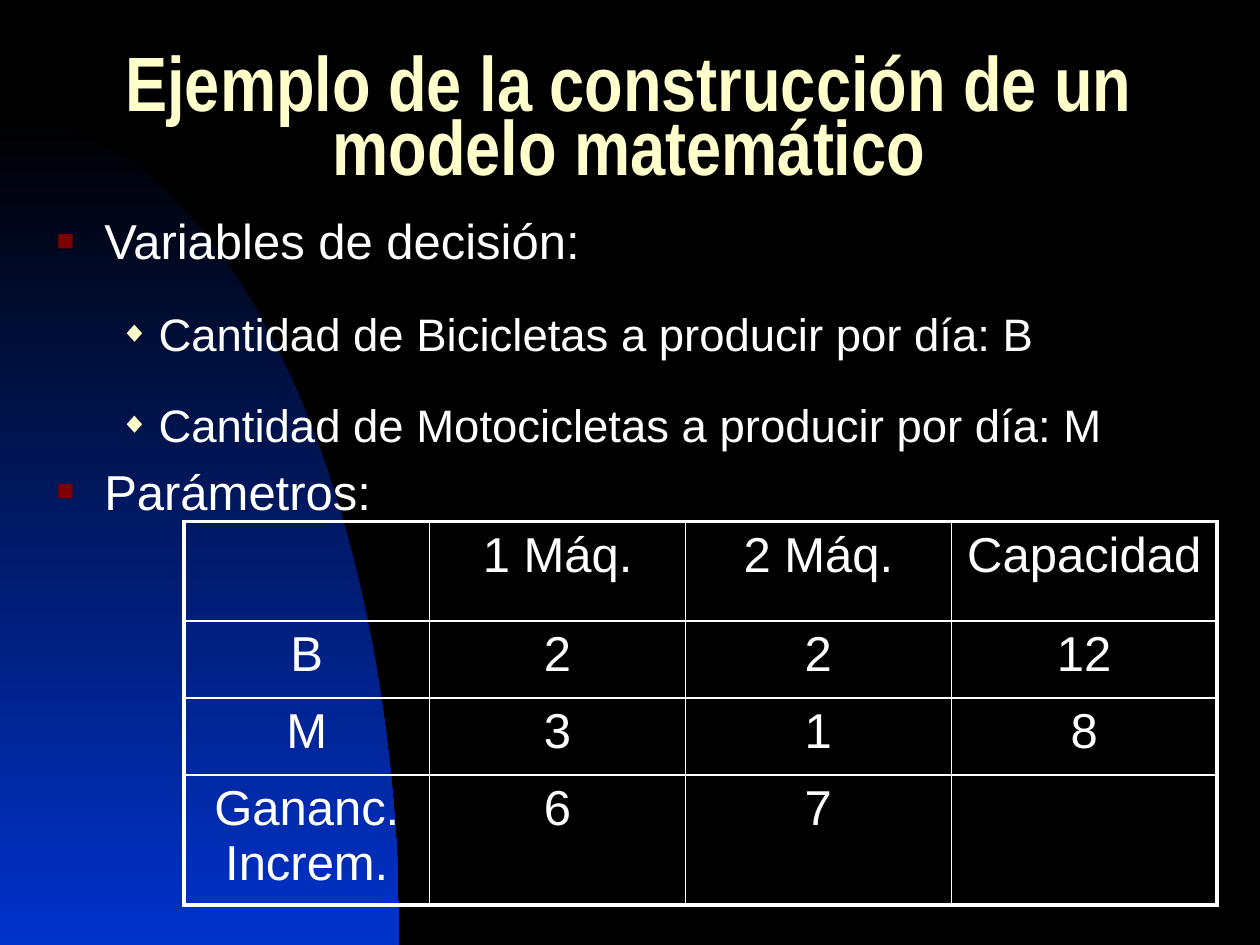
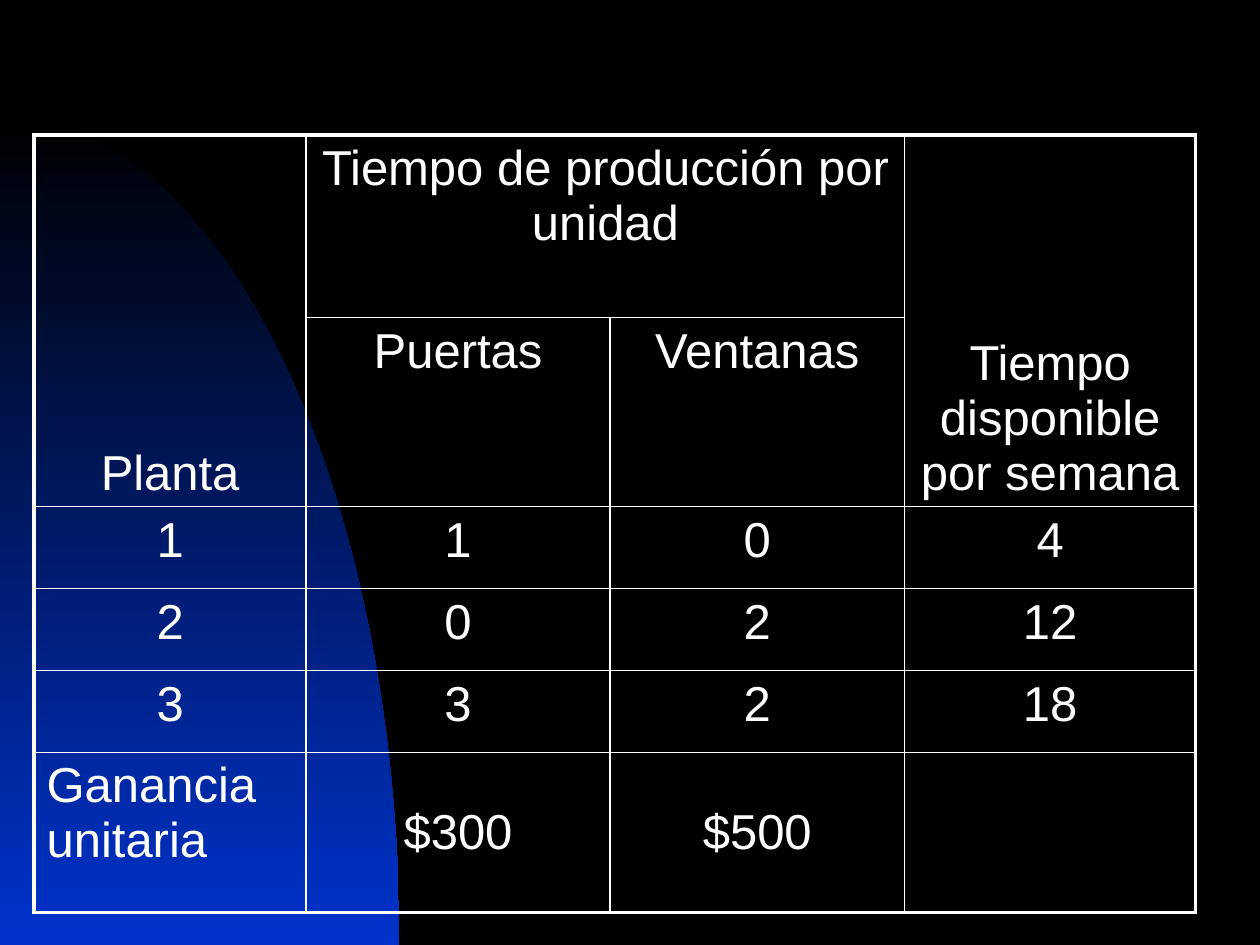
"""Builds two slides that set up a linear production model."""
import math
from dataclasses import dataclass

from lxml import etree
from pptx import Presentation
from pptx import util as u
from pptx.dml.color import RGBColor
from pptx.enum import text
from pptx.oxml.ns import qn


@dataclass(frozen=True)
class Theme:
    night: str = "000000"
    blue: str = "0033CC"
    cream: str = "FFFFCC"
    white: str = "FFFFFF"
    maroon: str = "800000"
    title_font: str = "Arial Narrow"
    body_font: str = "Arial"
    title_size: int = 44
    body_size: int = 28
    sub_size: int = 26
    inner_line: float = 1
    outer_line: float = 2.25


class Deck:
    def __init__(self, theme):
        self.theme = theme
        self.prs = Presentation()
        self.prs.slide_width, self.prs.slide_height = u.Inches(10), u.Inches(7.5)
        backdrop = self.prs.slide_master.background.fill
        backdrop.solid()
        backdrop.fore_color.rgb = RGBColor.from_string(theme.night)
        self.slide = None

    def new_slide(self):
        self.slide = self.prs.slides.add_slide(self.prs.slide_layouts[6])
        self.glow()

    def glow(self, width=3.17, height=6.58, steps=60):
        floor = 7.5
        angles = [math.pi / 2 * step / steps for step in range(steps + 1)]
        arc = [(u.Inches(width * math.sin(a)), u.Inches(floor - height * math.cos(a)))
               for a in angles]
        outline = self.slide.shapes.build_freeform(*arc[0])
        outline.add_line_segments(arc[1:] + [(0, u.Inches(floor))])
        quarter = outline.convert_to_shape()
        quarter.shadow.inherit = False
        quarter.line.fill.background()
        quarter.fill.gradient()
        quarter.fill.gradient_angle = 270
        for stop, color in zip(quarter.fill.gradient_stops, (self.theme.night, self.theme.blue)):
            stop.color.rgb = RGBColor.from_string(color)

    def text_frame(self, left, top, width, height):
        box = self.slide.shapes.add_textbox(*map(u.Inches, (left, top, width, height)))
        box.text_frame.word_wrap = True
        return box.text_frame

    def add_run(self, paragraph, words, size, font=None, color=None, bold=False):
        run = paragraph.add_run()
        run.text = words
        run.font.size = u.Pt(size)
        run.font.name = font or self.theme.body_font
        run.font.bold = bold
        run.font.color.rgb = RGBColor.from_string(color or self.theme.white)

    def space_before(self, paragraph, percent=20):
        before = etree.SubElement(paragraph._p.get_or_add_pPr(), qn("a:spcBef"))
        etree.SubElement(before, qn("a:spcPct"), val=str(percent * 1000))

    def title(self, words):
        theme = self.theme
        frame = self.text_frame(0.27, 0.36, 9.45, 1.25)
        frame.vertical_anchor = text.MSO_ANCHOR.MIDDLE
        heading = frame.paragraphs[0]
        heading.alignment = text.PP_ALIGN.CENTER
        heading.line_spacing = 0.7
        self.add_run(heading, words, theme.title_size, theme.title_font, theme.cream, True)

    def bullets(self, items):
        theme = self.theme
        levels = [(0.38, 0.38, "■", theme.maroon, 60, theme.body_size),
                  (0.81, 0.31, "◆", theme.cream, 65, theme.sub_size)]
        frame = self.text_frame(0.35, 1.39, 9.29, 2.99)
        for index, (level, spacing, words) in enumerate(items):
            margin, hanging, mark, color, scale, size = levels[level]
            item = frame.paragraphs[0] if index == 0 else frame.add_paragraph()
            item.level = level
            item.line_spacing = spacing
            self.space_before(item)
            props = item._p.get_or_add_pPr()
            props.set("marL", str(u.Inches(margin)))
            props.set("indent", str(-u.Inches(hanging)))
            etree.SubElement(etree.SubElement(props, qn("a:buClr")), qn("a:srgbClr"), val=color)
            etree.SubElement(props, qn("a:buSzPct"), val=str(scale * 1000))
            etree.SubElement(props, qn("a:buFont"), typeface=theme.body_font)
            etree.SubElement(props, qn("a:buChar"), char=mark)
            self.add_run(item, words, size)

    def borders(self, cell, outer_sides):
        props = cell._tc.get_or_add_tcPr()
        for index, side in enumerate("LRTB"):
            weight = self.theme.outer_line if side in outer_sides else self.theme.inner_line
            line = etree.Element(qn(f"a:ln{side}"), w=str(u.Pt(weight)))
            fill = etree.SubElement(line, qn("a:solidFill"))
            etree.SubElement(fill, qn("a:srgbClr"), val=self.theme.white)
            props.insert(index, line)

    def table(self, left, top, widths, heights, rows, merges=(), anchors=None, left_aligned=()):
        frame = self.slide.shapes.add_table(
            len(heights), len(widths), u.Inches(left), u.Inches(top),
            u.Inches(sum(widths)), u.Inches(sum(heights)))
        grid = frame.table
        grid.first_row = grid.horz_banding = False
        for column, width in zip(grid.columns, widths):
            column.width = u.Inches(width)
        for row, height in zip(grid.rows, heights):
            row.height = u.Inches(height)
        for first, last in merges:
            grid.cell(*first).merge(grid.cell(*last))
        for r, row in enumerate(rows):
            for c, words in enumerate(row):
                cell = grid.cell(r, c)
                cell.fill.background()
                edges = {"L": c == 0, "R": c == len(widths) - 1,
                         "T": r == 0, "B": r == len(heights) - 1}
                self.borders(cell, [side for side, outer in edges.items() if outer])
                cell.vertical_anchor = (anchors or {}).get((r, c), text.MSO_ANCHOR.TOP)
                if words:
                    entry = cell.text_frame.paragraphs[0]
                    entry.alignment = (text.PP_ALIGN.LEFT if (r, c) in left_aligned
                                       else text.PP_ALIGN.CENTER)
                    self.space_before(entry)
                    self.add_run(entry, words, self.theme.body_size)


def model_slide(deck):
    deck.new_slide()
    deck.title("Ejemplo de la construcción de un modelo matemático")
    deck.bullets([
        (0, 1.5, "Variables de decisión:"),
        (1, 1.5, "Cantidad de Bicicletas a producir por día: B"),
        (1, 1.5, "Cantidad de Motocicletas a producir por día: M"),
        (0, 1.0, "Parámetros:"),
    ])
    deck.table(1.46, 4.14, [1.95, 2.03, 2.11, 2.11], [0.79, 0.61, 0.61, 0.79], [
        ["", "1 Máq.", "2 Máq.", "Capacidad"],
        ["B", "2", "2", "12"],
        ["M", "3", "1", "8"],
        ["Gananc. Increm.", "6", "7", ""],
    ])


def plants_slide(deck):
    bottom, middle = text.MSO_ANCHOR.BOTTOM, text.MSO_ANCHOR.MIDDLE
    deck.new_slide()
    deck.table(
        0.27, 1.07, [2.16, 2.41, 2.34, 2.31], [1.45, 0.77, 0.65, 0.65, 0.65, 1.27],
        [
            ["Planta", "Tiempo de producción por unidad", "", "Tiempo disponible por semana"],
            ["", "Puertas", "Ventanas", ""],
            ["1", "1", "0", "4"],
            ["2", "0", "2", "12"],
            ["3", "3", "2", "18"],
            ["Ganancia unitaria", "$300", "$500", ""],
        ],
        merges=[((0, 0), (1, 0)), ((0, 1), (0, 2)), ((0, 3), (1, 3))],
        anchors={(0, 0): bottom, (0, 3): bottom, (5, 1): middle, (5, 2): middle},
        left_aligned={(5, 0)},
    )


def main():
    deck = Deck(Theme())
    model_slide(deck)
    plants_slide(deck)
    deck.prs.save("out.pptx")


if __name__ == "__main__":
    main()
